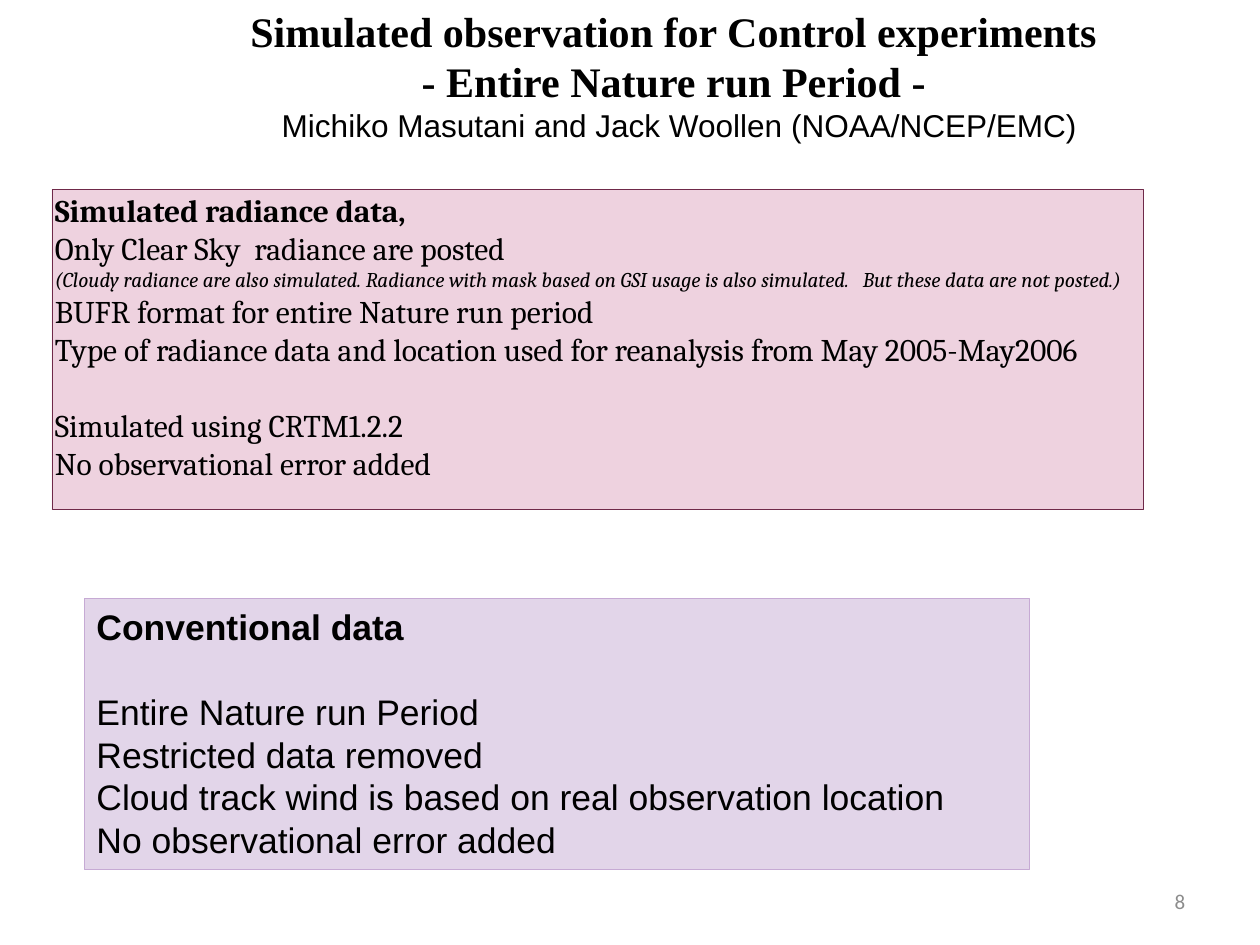
from pptx import Presentation
from pptx.dml.color import RGBColor
from pptx.enum import shapes, text
from pptx.util import Inches, Pt

BLACK = RGBColor(0x00, 0x00, 0x00)
GRAY = RGBColor(0x8C, 0x8C, 0x8C)
PINK = RGBColor(0xEE, 0xD2, 0xDF)
PLUM = RGBColor(0x6F, 0x29, 0x49)
LILAC = RGBColor(0xE2, 0xD5, 0xE9)
VIOLET = RGBColor(0xC6, 0xAA, 0xD4)
LEFT, CENTER, RIGHT = text.PP_ALIGN.LEFT, text.PP_ALIGN.CENTER, text.PP_ALIGN.RIGHT
TOP, MIDDLE = text.MSO_ANCHOR.TOP, text.MSO_ANCHOR.MIDDLE

TITLE = [
    ("Simulated observation for Control experiments ", "Times New Roman", 32, "b", 0),
    ("- Entire Nature run Period - ", "Times New Roman", 32, "b", 0),
    ("Michiko Masutani and Jack Woollen (NOAA/NCEP/EMC)", "Arial", 24, "", 0),
]
RADIANCE = [
    ("Simulated radiance data,", "Cambria", 24, "b", 0),
    ("Only Clear Sky  radiance are posted", "Cambria", 24, "", 0),
    ("(Cloudy radiance are also simulated. Radiance with mask based on GSI usage "
     "is also simulated.   But these data are not posted.)", "Cambria", 16, "i", 0),
    ("BUFR format for entire Nature run period", "Cambria", 24, "", 0),
    ("Type of radiance data and location used for reanalysis from May 2005-May2006",
     "Cambria", 24, "", 0),
    ("Simulated using CRTM1.2.2", "Cambria", 24, "", 29),
    ("No observational error added", "Cambria", 24, "", 0),
]
CONVENTIONAL = [
    ("Conventional data", "Arial", 27, "b", 0),
    ("Entire Nature run Period", "Arial", 27, "", 32),
    ("Restricted data removed", "Arial", 27, "", 0),
    ("Cloud track wind is based on real observation location", "Arial", 27, "", 0),
    ("No observational error added", "Arial", 27, "", 0),
]
NUMBER = [("8", "Calibri", 16, "", 0)]

PANELS = [
    ((0.55, 2, 11.54, 3.39), PINK, PLUM, RADIANCE, (0.03, 0.02)),
    ((0.89, 6.33, 9.99, 2.86), LILAC, VIOLET, CONVENTIONAL, (0.13, 0.07)),
]


def write(sp, lines, inset, align=LEFT, anchor=TOP, color=BLACK):
    tf = sp.text_frame
    tf.word_wrap = True
    tf.auto_size = text.MSO_AUTO_SIZE.NONE
    tf.vertical_anchor = anchor
    tf.margin_left = tf.margin_right = Inches(inset[0])
    tf.margin_top = tf.margin_bottom = Inches(inset[1])
    for i, (line, font, size, style, gap) in enumerate(lines):
        p = tf.add_paragraph() if i else tf.paragraphs[0]
        p.alignment = align
        p.line_spacing = 1.0
        p.space_before = Pt(gap)
        r = p.add_run()
        r.text = line
        r.font.name = font
        r.font.size = Pt(size)
        r.font.bold = style == "b"
        r.font.italic = style == "i"
        r.font.color.rgb = color


prs = Presentation()
prs.slide_width, prs.slide_height = Inches(13.32), Inches(9.99)
s = prs.slides.add_slide(prs.slide_layouts[5])

title = s.shapes.title
title.left, title.top, title.width, title.height = map(Inches, (1.3, -0.22, 11.76, 2.02))
write(title, TITLE, (0.07, 0.04), CENTER, MIDDLE)

for box, fill, line, lines, inset in PANELS:
    sp = s.shapes.add_shape(shapes.MSO_SHAPE.RECTANGLE, *map(Inches, box))
    sp.shadow.inherit = False
    sp.fill.solid()
    sp.fill.fore_color.rgb = fill
    sp.line.color.rgb = line
    sp.line.width = Pt(0.75)
    write(sp, lines, inset)

number = s.shapes.add_textbox(*map(Inches, (9.55, 9.26, 3.11, 0.53)))
write(number, NUMBER, (0.13, 0.07), RIGHT, MIDDLE, GRAY)

prs.save("out.pptx")
